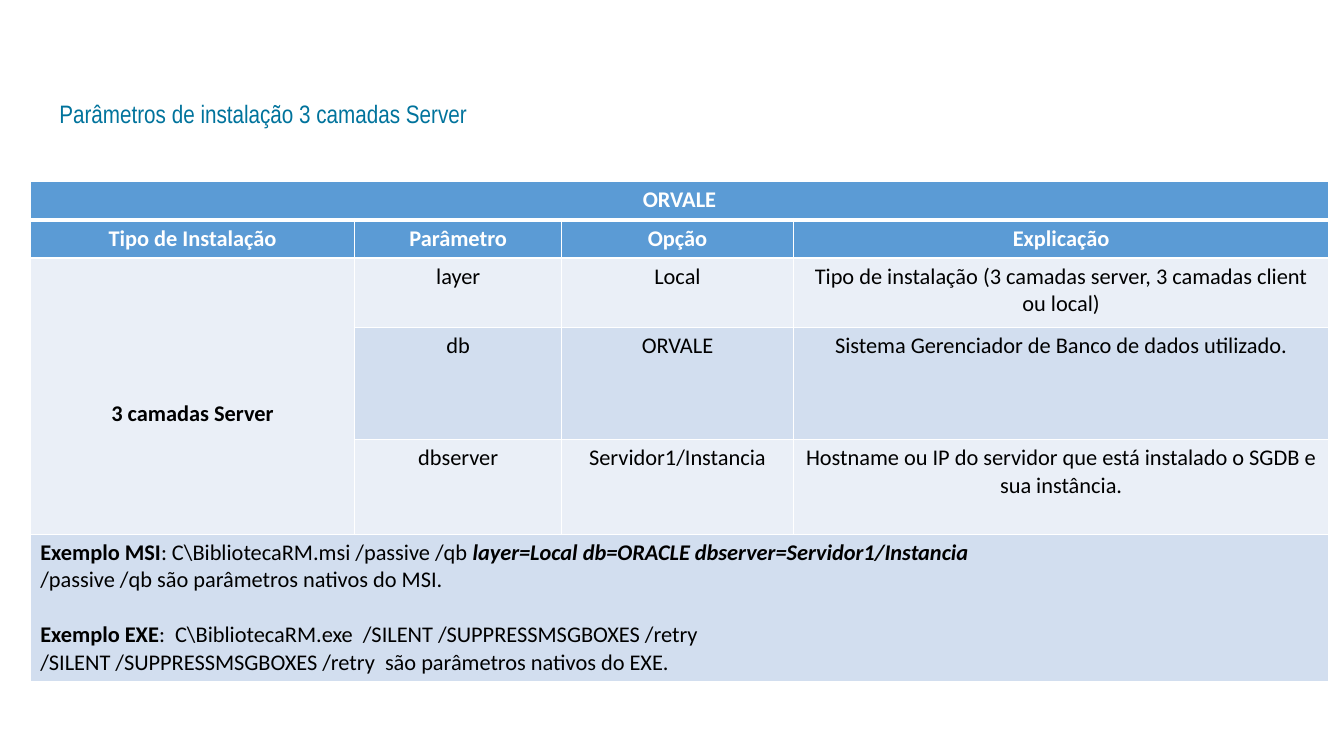
"""Build the slide on the parameters of the three-layer server installation."""
from dataclasses import dataclass

from lxml import etree
from pptx import Presentation
from pptx import util as u
from pptx.dml.color import RGBColor
from pptx.enum import text
from pptx.oxml import ns
from pptx.slide import Slide
from pptx.table import Table, _Cell
from pptx.text.text import Font

WHITE = RGBColor(0xFF, 0xFF, 0xFF)
BLACK = RGBColor(0x00, 0x00, 0x00)
HEADER_BLUE = RGBColor(0x5B, 0x9B, 0xD5)
LIGHT_BAND = RGBColor(0xEA, 0xEF, 0xF7)
DARK_BAND = RGBColor(0xD2, 0xDE, 0xEF)
TITLE_BLUE = RGBColor(0x00, 0x73, 0x9C)

COLUMN_WIDTHS = (3.22, 2.05, 2.3, 5.31)
ROW_HEIGHTS = (0.38, 0.38, 0.69, 1.11, 0.94, 1.46)
EXAMPLE_ROW = len(ROW_HEIGHTS) - 1
ROW_FILLS = (HEADER_BLUE, HEADER_BLUE, LIGHT_BAND, DARK_BAND, LIGHT_BAND, DARK_BAND)
MERGES = (((0, 0), (0, 3)), ((2, 0), (4, 0)), ((EXAMPLE_ROW, 0), (EXAMPLE_ROW, 3)))


@dataclass(frozen=True)
class RowText:
    """Centred texts of one table row, starting at a column."""
    row: int
    first_column: int
    texts: tuple[str, ...]
    color: RGBColor = BLACK
    bold: bool = False


@dataclass(frozen=True)
class Piece:
    """Stretch of example text with one style."""
    content: str
    bold: bool = False
    italic: bool = False


@dataclass(frozen=True)
class ExampleLine:
    """Paragraph of the example row."""
    pieces: tuple[Piece, ...]
    space_before: float = 0


ROW_TEXTS = (
    RowText(0, 0, ("ORVALE",), WHITE, True),
    RowText(1, 0, ("Tipo de Instalação", "Parâmetro", "Opção", "Explicação"), WHITE, True),
    RowText(2, 0, ("3 camadas Server",), BLACK, True),
    RowText(2, 1, ("layer", "Local",
                   "Tipo de instalação (3 camadas server, 3 camadas client ou local)")),
    RowText(3, 1, ("db", "ORVALE", "Sistema Gerenciador de Banco de dados utilizado.")),
    RowText(4, 1, ("dbserver", "Servidor1/Instancia",
                   "Hostname ou IP do servidor que está instalado o SGDB e sua instância.")),
)

EXAMPLE_LINES = (
    ExampleLine((Piece("Exemplo MSI", bold=True),
                 Piece(": C\\BibliotecaRM.msi /passive /qb "),
                 Piece("layer=Local db=ORACLE dbserver=Servidor1/Instancia", True, True))),
    ExampleLine((Piece("/passive /qb são parâmetros nativos do MSI."),)),
    ExampleLine((Piece("Exemplo EXE", bold=True),
                 Piece(":  C\\BibliotecaRM.exe  /SILENT /SUPPRESSMSGBOXES /retry")), 19.5),
    ExampleLine((Piece("/SILENT /SUPPRESSMSGBOXES /retry  são parâmetros nativos do EXE."),)),
)


def style_font(font: Font, color: RGBColor, bold: bool = False,
               italic: bool = False, size: float = 16, name: str = "Calibri") -> None:
    """Set every property of a font."""
    font.name, font.size, font.bold, font.italic = name, u.Pt(size), bold, italic
    font.color.rgb = color


def add_borders(cell: _Cell, top: float, bottom: float) -> None:
    """Give a cell white borders, with widths in points."""
    properties = cell._tc.get_or_add_tcPr()
    for side, width in (("L", 1), ("R", 1), ("T", top), ("B", bottom)):
        line = etree.SubElement(properties, ns.qn(f"a:ln{side}"), w=str(u.Pt(width)))
        fill = etree.SubElement(line, ns.qn("a:solidFill"))
        etree.SubElement(fill, ns.qn("a:srgbClr"), val=str(WHITE))


def fill_row(table: Table, row_text: RowText) -> None:
    """Write the centred texts of one row."""
    for column, content in enumerate(row_text.texts, row_text.first_column):
        paragraph = table.cell(row_text.row, column).text_frame.paragraphs[0]
        paragraph.text = content
        paragraph.alignment = text.PP_ALIGN.CENTER
        style_font(paragraph.runs[0].font, row_text.color, row_text.bold)


def fill_examples(cell: _Cell) -> None:
    """Write the command examples."""
    text_frame = cell.text_frame
    for index, line in enumerate(EXAMPLE_LINES):
        paragraph = text_frame.add_paragraph() if index else text_frame.paragraphs[0]
        if line.space_before:
            paragraph.space_before = u.Pt(line.space_before)
        for piece in line.pieces:
            run = paragraph.add_run()
            run.text = piece.content
            style_font(run.font, BLACK, piece.bold, piece.italic)


def add_parameter_table(slide: Slide) -> None:
    """Add the table of installation parameters."""
    table = slide.shapes.add_table(
        len(ROW_HEIGHTS), len(COLUMN_WIDTHS), u.Inches(0.3), u.Inches(1.8),
        u.Inches(sum(COLUMN_WIDTHS)), u.Inches(sum(ROW_HEIGHTS))).table
    for column, width in zip(table.columns, COLUMN_WIDTHS):
        column.width = u.Inches(width)
    for index, (row, height) in enumerate(zip(table.rows, ROW_HEIGHTS)):
        row.height = u.Inches(height)
        for cell in row.cells:
            add_borders(cell, 3 if index == 1 else 1, 3 if index == 0 else 1)
            cell.fill.solid()
            cell.fill.fore_color.rgb = ROW_FILLS[index]
    for first, last in MERGES:
        table.cell(*first).merge(table.cell(*last))
    for row_text in ROW_TEXTS:
        fill_row(table, row_text)
    fill_examples(table.cell(EXAMPLE_ROW, 0))
    installation_type = table.cell(2, 0)
    installation_type.vertical_anchor = text.MSO_ANCHOR.MIDDLE
    installation_type.margin_top = u.Inches(0.36)
    installation_type.margin_bottom = u.Inches(0.01)


def add_title(slide: Slide) -> None:
    """Add the slide title."""
    title = slide.shapes.add_textbox(u.Inches(0.49), u.Inches(0.96), u.Inches(5.02), u.Inches(0.47))
    title.text_frame.word_wrap = True
    paragraph = title.text_frame.paragraphs[0]
    paragraph.text = "Parâmetros de instalação 3 camadas Server"
    paragraph.line_spacing = 0.9
    style_font(paragraph.runs[0].font, TITLE_BLUE, size=18, name="Arial Narrow")


def main() -> None:
    """Build and save the presentation."""
    presentation = Presentation()
    presentation.slide_width = u.Inches(13.33)
    presentation.slide_height = u.Inches(7.5)
    slide = presentation.slides.add_slide(presentation.slide_layouts[6])
    add_parameter_table(slide)
    add_title(slide)
    presentation.save("out.pptx")


if __name__ == "__main__":
    main()
